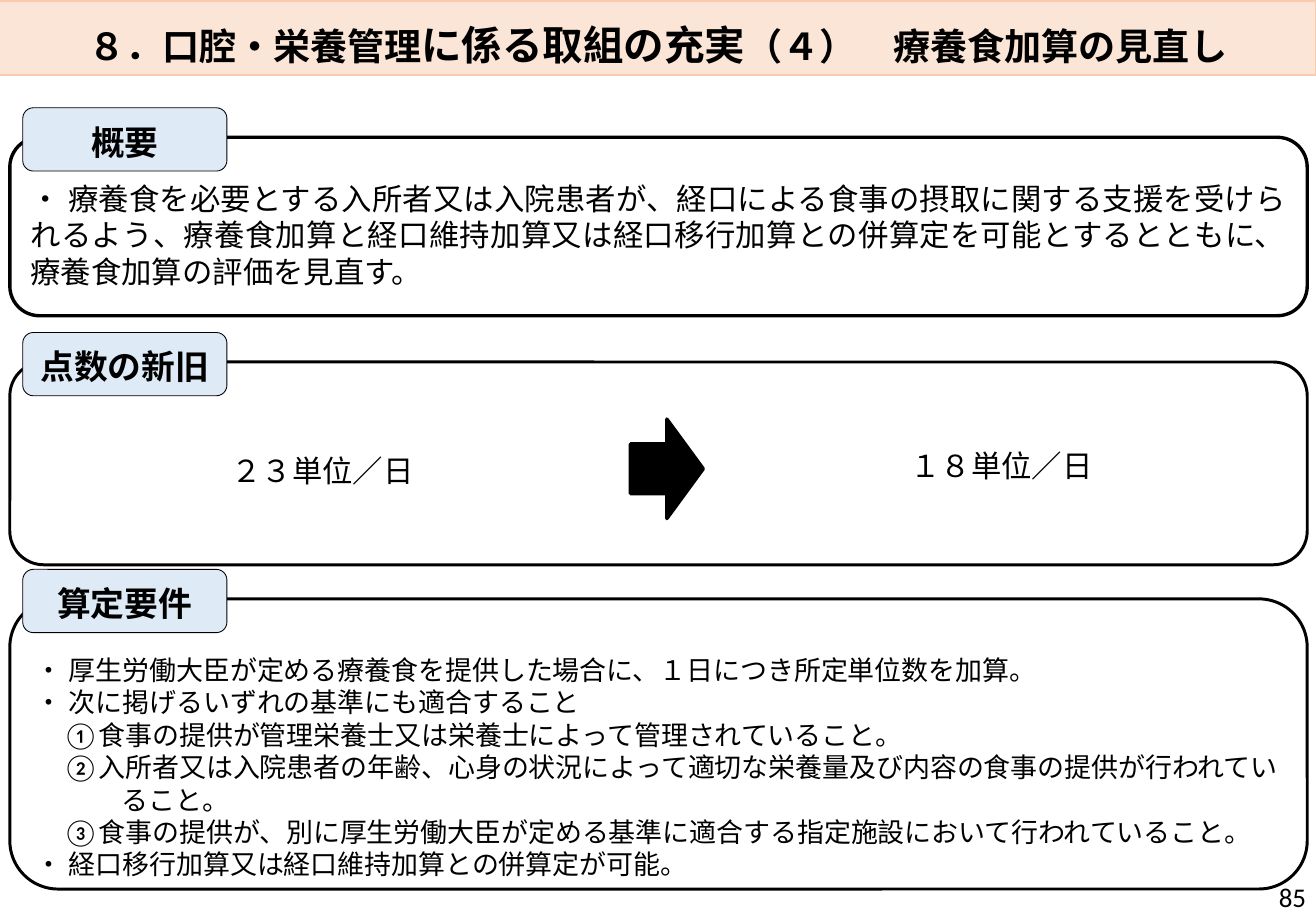
from pptx import Presentation
from pptx.dml.color import RGBColor
from pptx.enum.shapes import MSO_SHAPE as SHAPE
from pptx.enum.text import MSO_ANCHOR as ANCHOR, PP_ALIGN as ALIGN
from pptx.oxml.ns import qn
from pptx.util import Pt

GOTHIC, LATIN = "Noto Sans CJK JP", "Calibri"
BLACK, PEACH, PEACH_EDGE, PALE_BLUE = "000000", "FBE5D6", "F8CBAD", "DEEBF7"

TITLE = [("８．口腔・栄養管理", 22), ("に係る取組の充実", 24), ("（４）　療養食加算の見直し", 22)]
OVERVIEW = ["・ 療養食を必要とする入所者又は入院患者が、経口による食事の摂取に関する支援を受けられるよう、"
            "療養食加算と経口維持加算又は経口移行加算との併算定を可能とするとともに、療養食加算の評価を見直す。"]
REQUIREMENTS = [
    "・ 厚生労働大臣が定める療養食を提供した場合に、１日につき所定単位数を加算。",
    "・ 次に掲げるいずれの基準にも適合すること",
    "①食事の提供が管理栄養士又は栄養士によって管理されていること。",
    "②入所者又は入院患者の年齢、心身の状況によって適切な栄養量及び内容の食事の提供が行われていること。",
    "③食事の提供が、別に厚生労働大臣が定める基準に適合する指定施設において行われていること。",
    "・ 経口移行加算又は経口維持加算との併算定が可能。",
]
# heading, frame top, frame height, line width, body, text size, top inset, alignment
SECTIONS = [
    ("概要", 81.4, 105.8, 2, OVERVIEW, 18, 20, ALIGN.JUSTIFY),
    ("点数の新旧", 214.6, 120.2, 1.75, [], 18, 0, ALIGN.LEFT),
    ("算定要件", 355, 172, 1.75, REQUIREMENTS, 16, 24, ALIGN.LEFT),
]
# text, left, top, width, height, size, font, alignment
LABELS = [
    ("２３単位／日", 18.7, 230.4, 344.9, 96.5, 18, GOTHIC, ALIGN.CENTER),
    ("１８単位／日", 421.2, 227.5, 344.9, 96.5, 18, LATIN, ALIGN.CENTER),
    ("85", 727.2, 521.3, 54, 20.9, 16, LATIN, ALIGN.RIGHT),
]
FRAME_LEFT, FRAME_WIDTH = 5.8, 769
TAB_LEFT, TAB_WIDTH, TAB_HEIGHT, TAB_RISE = 13.5, 121, 37.5, 17.5
ITEM_LEFT, ITEM_HANG = 51, 35


def rgb(value):
    return RGBColor.from_string(value)


def set_font(font, size, name, bold=False):
    """Format a font, using the same typeface for Japanese text."""
    font.size, font.name, font.bold = Pt(size), name, bold
    font.color.rgb = rgb(BLACK)
    font._element.get_or_add_latin().addnext(
        font._element.makeelement(qn("a:ea"), {"typeface": name}))


def paint(s, fill, line, width):
    if fill:
        s.fill.solid()
        s.fill.fore_color.rgb = rgb(fill)
    else:
        s.fill.background()
    s.line.color.rgb = rgb(line)
    s.line.width = Pt(width)


def add_shape(kind, box, fill, width):
    s = slide.shapes.add_shape(kind, *map(Pt, box))
    s.shadow.inherit = False
    paint(s, fill, BLACK, width)
    return s


def write(s, lines, size, name, align, anchor, bold=False):
    tf = s.text_frame
    tf.word_wrap, tf.vertical_anchor = True, anchor
    for i, line in enumerate(lines):
        p = tf.paragraphs[0] if i == 0 else tf.add_paragraph()
        p.text, p.alignment = line, align
        set_font(p.font, size, name, bold)
    return tf


prs = Presentation()
prs.slide_width, prs.slide_height = Pt(780), Pt(540)
slide = prs.slides.add_slide(prs.slide_layouts[5])

title = slide.shapes.title
title.left, title.top, title.width, title.height = map(Pt, (-0.5, 0.5, 780.5, 44))
paint(title, PEACH, PEACH_EDGE, 1)
title.text_frame.vertical_anchor = ANCHOR.BOTTOM
p = title.text_frame.paragraphs[0]
p.alignment = ALIGN.CENTER
for text, size in TITLE:
    r = p.add_run()
    r.text = text
    set_font(r.font, size, GOTHIC, bold=True)

for heading, top, height, width, body, size, inset, align in SECTIONS:
    frame = add_shape(SHAPE.ROUNDED_RECTANGLE, (FRAME_LEFT, top, FRAME_WIDTH, height), None, width)
    if body:
        tf = write(frame, body, size, LATIN, align, ANCHOR.TOP)
        tf.margin_top = Pt(inset)
        for p in tf.paragraphs:
            p.line_spacing = Pt(1.2 * size)
            if p.text[0] in "①②③":
                pPr = p._p.get_or_add_pPr()
                pPr.set("marL", str(Pt(ITEM_LEFT)))
                pPr.set("indent", str(-Pt(ITEM_HANG)))
    tab = add_shape(SHAPE.ROUNDED_RECTANGLE,
                    (TAB_LEFT, top - TAB_RISE, TAB_WIDTH, TAB_HEIGHT), PALE_BLUE, 0.5)
    write(tab, [heading], 20, GOTHIC, ALIGN.CENTER, ANCHOR.BOTTOM, bold=True)

add_shape(SHAPE.RIGHT_ARROW, (373.7, 248.4, 43.2, 59), BLACK, 2)

for text, left, top, width, height, size, name, align in LABELS:
    s = slide.shapes.add_textbox(*map(Pt, (left, top, width, height)))
    write(s, [text], size, name, align, ANCHOR.MIDDLE)

prs.save("out.pptx")
